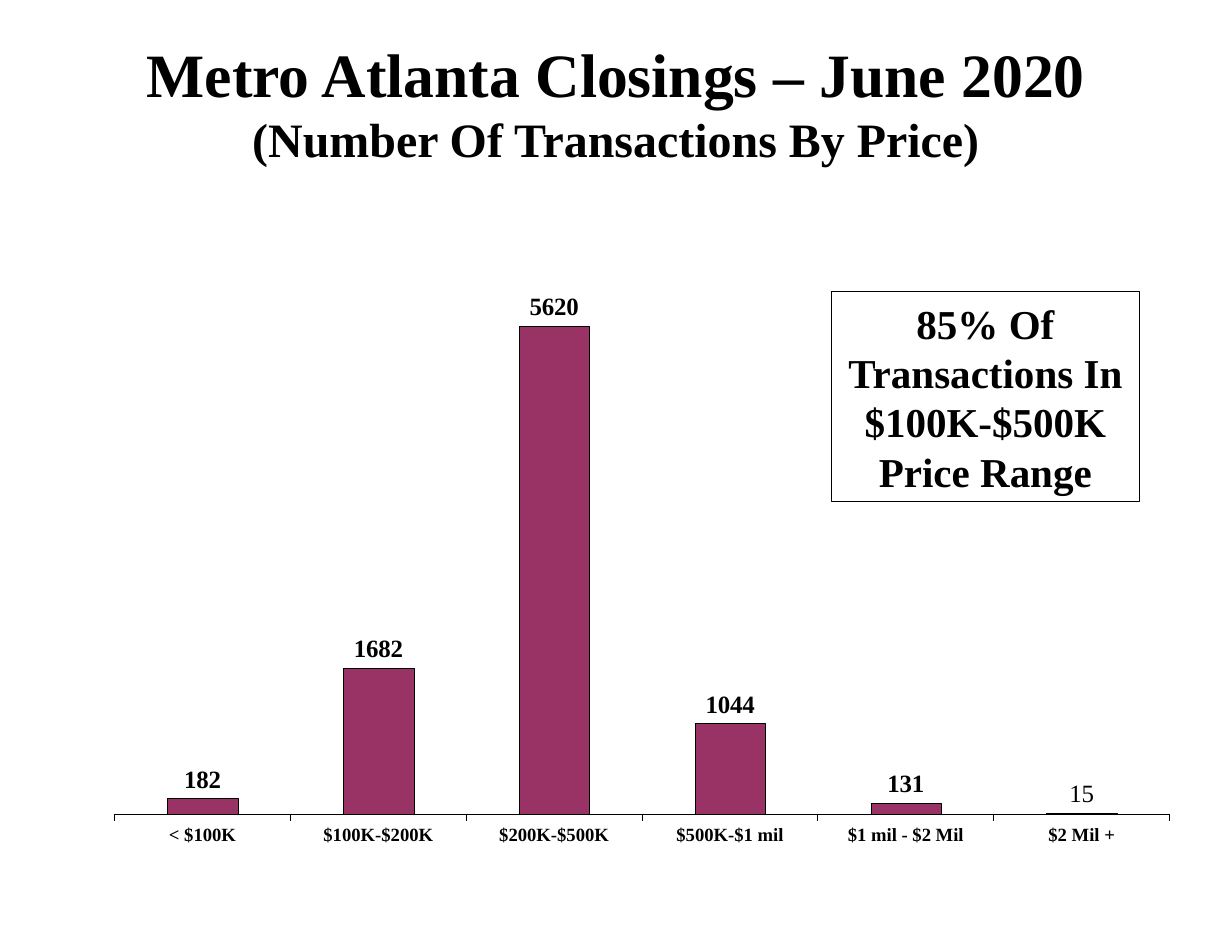
from pptx import Presentation
from pptx.chart.data import CategoryChartData
from pptx.dml.color import RGBColor
from pptx.enum.chart import XL_CHART_TYPE, XL_LABEL_POSITION, XL_TICK_LABEL_POSITION, XL_TICK_MARK
from pptx.enum.shapes import MSO_SHAPE
from pptx.enum.text import MSO_ANCHOR, PP_ALIGN
from pptx.oxml import parse_xml
from pptx.oxml.ns import nsdecls
from pptx.util import Pt

BLACK = RGBColor(0x00, 0x00, 0x00)
PLUM = RGBColor(0x99, 0x33, 0x66)
FONT = "Times New Roman"
PRICE_BANDS = {
    "< $100K": 182,
    "$100K-$200K": 1682,
    "$200K-$500K": 5620,
    "$500K-$1 mil": 1044,
    "$1 mil - $2 Mil": 131,
    "$2 Mil +": 15,
}
PLOT_AREA = {"x": 0.028, "y": 0.129, "w": 0.962, "h": 0.776}


def style_font(font, size, bold=True):
    font.name = FONT
    font.size = Pt(size)
    font.bold = bold
    font.color.rgb = BLACK


def fill_text(text_frame, text, sizes):
    text_frame.word_wrap = True
    text_frame.vertical_anchor = MSO_ANCHOR.MIDDLE
    paragraph = text_frame.paragraphs[0]
    paragraph.text = text
    paragraph.alignment = PP_ALIGN.CENTER
    for run, size in zip(paragraph.runs, sizes):
        style_font(run.font, size)


def add_title(slide, left, top, width, height):
    title = slide.shapes.add_textbox(Pt(left), Pt(top), Pt(width), Pt(height))
    fill_text(
        title.text_frame,
        "Metro Atlanta Closings – June 2020\v(Number Of Transactions By Price)",
        [39.6, 30.8],
    )


def add_callout(slide, left, top, width, height):
    callout = slide.shapes.add_shape(
        MSO_SHAPE.RECTANGLE, Pt(left), Pt(top), Pt(width), Pt(height)
    )
    callout.shadow.inherit = False
    callout.fill.background()
    callout.line.color.rgb = BLACK
    callout.line.width = Pt(0.75)
    fill_text(
        callout.text_frame, "85% Of Transactions In $100K-$500K Price Range", [26.4]
    )


def set_plot_area(chart):
    positions = "".join(
        f'<c:{side} val="{value}"/>' for side, value in PLOT_AREA.items()
    )
    layout = parse_xml(
        f'<c:layout {nsdecls("c")}><c:manualLayout><c:layoutTarget val="inner"/>'
        f'<c:xMode val="edge"/><c:yMode val="edge"/>{positions}'
        "</c:manualLayout></c:layout>"
    )
    plot_area = chart.plots[0]._element.getparent()
    for old_layout in plot_area.findall(layout.tag):
        plot_area.remove(old_layout)
    plot_area.insert(0, layout)


def add_closings_chart(slide, left, top, width, height):
    chart_data = CategoryChartData(number_format="0")
    chart_data.categories = list(PRICE_BANDS)
    chart_data.add_series("Series 1", list(PRICE_BANDS.values()))
    chart = slide.shapes.add_chart(
        XL_CHART_TYPE.COLUMN_CLUSTERED,
        Pt(left), Pt(top), Pt(width), Pt(height), chart_data,
    ).chart
    chart.has_legend = False
    chart.has_title = False
    style_font(chart.font, 12)
    set_plot_area(chart)

    category_axis = chart.category_axis
    category_axis.tick_label_position = XL_TICK_LABEL_POSITION.LOW
    category_axis.major_tick_mark = XL_TICK_MARK.OUTSIDE
    category_axis.format.line.color.rgb = BLACK
    category_axis.format.line.width = Pt(0.01)
    style_font(category_axis.tick_labels.font, 12)

    value_axis = chart.value_axis
    value_axis.minimum_scale = 0
    value_axis.maximum_scale = 6000
    value_axis.has_major_gridlines = False
    value_axis.visible = False

    plot = chart.plots[0]
    plot.gap_width = 150
    plot.vary_by_categories = False
    series = plot.series[0]
    series.format.fill.solid()
    series.format.fill.fore_color.rgb = PLUM
    series.format.line.color.rgb = BLACK
    series.format.line.width = Pt(0.06)

    labels = series.data_labels
    labels.show_value = True
    labels.number_format = "0"
    labels.number_format_is_linked = False
    labels.position = XL_LABEL_POSITION.OUTSIDE_END
    style_font(labels.font, 16)

    last_label = series.points[len(PRICE_BANDS) - 1].data_label
    style_font(last_label.font, 16, bold=False)
    last_label.position = XL_LABEL_POSITION.OUTSIDE_END


def main():
    presentation = Presentation()
    presentation.slide_width = Pt(792)
    presentation.slide_height = Pt(612)
    slide = presentation.slides.add_slide(presentation.slide_layouts[6])
    add_closings_chart(slide, 54, 132.5, 705, 432)
    add_title(slide, 0, 49, 792, 33)
    add_callout(slide, 534.5, 187.5, 198, 135)
    presentation.save("out.pptx")


if __name__ == "__main__":
    main()
